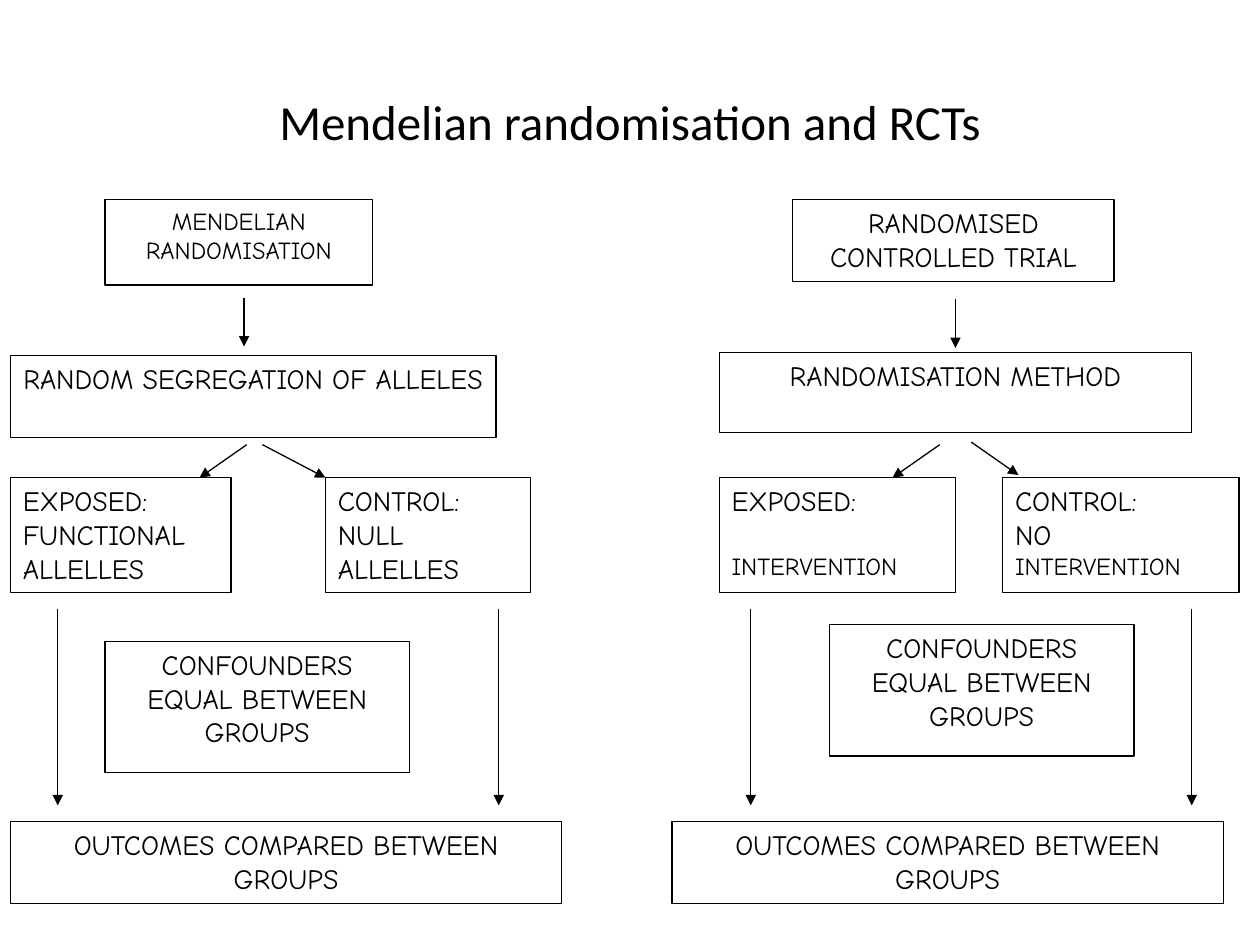
from dataclasses import dataclass

from lxml import etree
from pptx import Presentation
from pptx import util as u
from pptx.dml.color import RGBColor
from pptx.enum import shapes, text
from pptx.oxml.ns import qn

COLUMNS, ROWS = 240, 180  # 24 grid steps to the inch
SLIDE_WIDTH, SLIDE_HEIGHT = u.Inches(10), u.Inches(7.5)


@dataclass(frozen=True)
class Theme:
    ink: RGBColor = RGBColor(0, 0, 0)
    paper: RGBColor = RGBColor(255, 255, 255)
    title_font: str = "Calibri"
    box_font: str = "Comic Neue"
    title_size: float = 28
    body_size: float = 16
    small_size: float = 14
    skipped_line: float = 19
    stroke: float = 0.75


@dataclass(frozen=True)
class Span:
    words: str
    size: float


@dataclass(frozen=True)
class Line:
    spans: tuple[Span, ...]
    space_before: float = 0


@dataclass(frozen=True)
class Box:
    column: float
    row: float
    width: float
    height: float
    lines: tuple[Line, ...]
    centred: bool = True


@dataclass(frozen=True)
class Arrow:
    column: float
    row: float
    to_column: float
    to_row: float


THEME = Theme()


def across(columns: float) -> int:
    return round(SLIDE_WIDTH * columns / COLUMNS)


def down(rows: float) -> int:
    return round(SLIDE_HEIGHT * rows / ROWS)


def line(words: str, size: float = THEME.body_size, space_before: float = 0) -> tuple[Line, ...]:
    return (Line((Span(words, size),), space_before),)


def group_box(column: float, width: float, lines: tuple[Line, ...]) -> Box:
    return Box(column, 91, width, 21.8, lines, centred=False)


def confounders_box(column: float, row: float) -> Box:
    return Box(column, row, 58, 25, line("CONFOUNDERS EQUAL BETWEEN GROUPS"))


def outcomes_box(column: float) -> Box:
    return Box(column, 156.5, 105, 15.6, line("OUTCOMES COMPARED BETWEEN GROUPS"))


NO_INTERVENTION = Line((Span("NO ", THEME.body_size), Span("INTERVENTION", THEME.small_size)))

MENDELIAN_BOXES = (
    Box(20, 38, 51, 16.3, line("MENDELIAN RANDOMISATION", THEME.small_size)),
    Box(2, 67.7, 92.5, 15.6, line("RANDOM SEGREGATION OF ALLELES")),
    group_box(2, 42, line("EXPOSED: FUNCTIONAL ALLELLES")),
    group_box(62, 39, line("CONTROL: NULL ALLELLES")),
    confounders_box(20, 122.2),
    outcomes_box(2),
)
TRIAL_BOXES = (
    Box(151, 38, 61.2, 15.6, line("RANDOMISED CONTROLLED TRIAL")),
    Box(137, 67.2, 90, 15.2, line("RANDOMISATION METHOD")),
    group_box(137, 45, line("EXPOSED:")
              + line("INTERVENTION", THEME.small_size, THEME.skipped_line)),
    group_box(191, 45, line("CONTROL:") + (NO_INTERVENTION,)),
    confounders_box(158, 119),
    outcomes_box(128),
)
STEP_ARROWS = (
    Arrow(46.5, 56.7, 46.5, 66),
    Arrow(182, 56.9, 182, 66.3),
    Arrow(47, 84.7, 38, 91),
    Arrow(50, 84.7, 62, 91),
    Arrow(179, 84.7, 170, 91),
    Arrow(185, 84.2, 194, 90.5),
)
OUTCOME_ARROWS = tuple(Arrow(column, 116, column, 153.4) for column in (11, 95, 143, 227))


def add_title(page, words: str) -> None:
    title = page.shapes.title
    title.left, title.top = across(18), down(8)
    title.width, title.height = across(204), down(30)
    frame = title.text_frame
    frame.text = words
    frame.vertical_anchor = text.MSO_ANCHOR.MIDDLE
    para = frame.paragraphs[0]
    para.alignment = text.PP_ALIGN.CENTER
    para.font.name = THEME.title_font
    para.font.size = u.Pt(THEME.title_size)
    para.font.color.rgb = THEME.ink


def fill_paragraph(para, content: Line, centred: bool) -> None:
    para.alignment = text.PP_ALIGN.CENTER if centred else text.PP_ALIGN.LEFT
    para.space_before = u.Pt(content.space_before)
    para.font.name = THEME.box_font
    para.font.color.rgb = THEME.ink
    para.font.size = u.Pt(content.spans[0].size)
    for span in content.spans:
        run = para.add_run()
        run.text = span.words
        if span.size != content.spans[0].size:
            run.font.size = u.Pt(span.size)


def add_box(page, box: Box) -> None:
    shape = page.shapes.add_shape(
        shapes.MSO_SHAPE.RECTANGLE,
        across(box.column), down(box.row), across(box.width), down(box.height))
    shape.shadow.inherit = False
    shape.fill.solid()
    shape.fill.fore_color.rgb = THEME.paper
    shape.line.color.rgb = THEME.ink
    shape.line.width = u.Pt(THEME.stroke)
    frame = shape.text_frame
    frame.word_wrap = True
    frame.vertical_anchor = text.MSO_ANCHOR.TOP
    for index, content in enumerate(box.lines):
        para = frame.add_paragraph() if index else frame.paragraphs[0]
        fill_paragraph(para, content, box.centred)


def add_arrow(page, arrow: Arrow) -> None:
    connector = page.shapes.add_connector(
        shapes.MSO_CONNECTOR.STRAIGHT,
        across(arrow.column), down(arrow.row), across(arrow.to_column), down(arrow.to_row))
    connector.line.color.rgb = THEME.ink
    connector.line.width = u.Pt(THEME.stroke)
    properties = connector.element.spPr
    etree.SubElement(properties.find(qn("a:ln")), qn("a:tailEnd"), type="triangle")
    etree.SubElement(properties, qn("a:effectLst"))


def main() -> None:
    deck = Presentation()
    deck.slide_width, deck.slide_height = SLIDE_WIDTH, SLIDE_HEIGHT
    page = deck.slides.add_slide(deck.slide_layouts.get_by_name("Title Only"))
    add_title(page, "Mendelian randomisation and RCTs")
    for box in MENDELIAN_BOXES + TRIAL_BOXES:
        add_box(page, box)
    for arrow in STEP_ARROWS + OUTCOME_ARROWS:
        add_arrow(page, arrow)
    deck.save("out.pptx")


if __name__ == "__main__":
    main()
